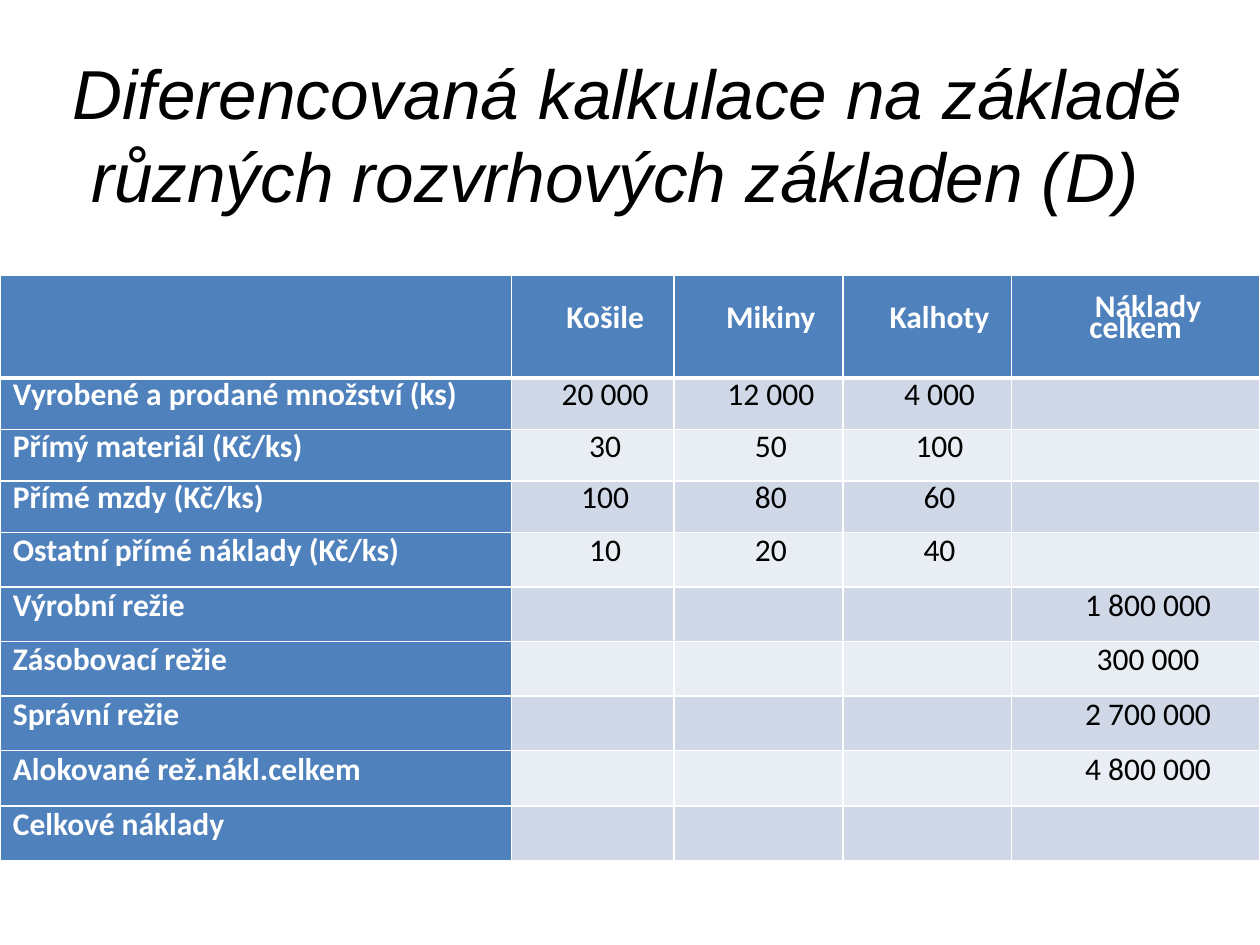
from dataclasses import dataclass

from lxml.etree import SubElement
from pptx import Presentation
from pptx.dml.color import RGBColor
from pptx.enum.text import MSO_ANCHOR as Anchor, PP_ALIGN as Align
from pptx.oxml.ns import qn
from pptx.util import Cm, Pt


@dataclass(frozen=True)
class Theme:
    white: str = "FFFFFF"
    black: str = "000000"
    head: str = "4F81BD"
    bands: tuple = ("D0D8E8", "E9EDF4")
    title_font: str = "Arial"
    table_font: str = "Calibri"
    title_size: float = 39.6
    table_size: float = 18
    spacing: float = 12
    thin: float = 1
    thick: float = 3


THEME = Theme()

TITLE = "Diferencovaná kalkulace na základě různých rozvrhových základen (D)"
COL_WIDTHS = [10.31, 3.28, 3.4, 3.4, 5.01]
ROW_HEIGHTS = [2.08] + [1.04] * 3 + [1.1] * 4 + [1.12, 1.1]
ROWS = [
    ("", "Košile", "Mikiny", "Kalhoty", "Náklady celkem"),
    ("Vyrobené a prodané množství (ks)", "20 000", "12 000", "4 000", ""),
    ("Přímý materiál (Kč/ks)", "30", "50", "100", ""),
    ("Přímé mzdy (Kč/ks)", "100", "80", "60", ""),
    ("Ostatní přímé náklady (Kč/ks)", "10", "20", "40", ""),
    ("Výrobní režie", "", "", "", "1 800 000"),
    ("Zásobovací režie", "", "", "", "300 000"),
    ("Správní režie", "", "", "", "2 700 000"),
    ("Alokované rež.nákl.celkem", "", "", "", "4 800 000"),
    ("Celkové náklady", "", "", "", ""),
]


def set_indent(p, indent):
    pPr = p._p.get_or_add_pPr()
    pPr.set("marL", "0")
    pPr.set("indent", str(Cm(indent)))


def add_run(p, text, font, size, color, bold=False, italic=False):
    r = p.add_run()
    r.text = text
    r.font.name = font
    r.font.size = Pt(size)
    r.font.bold = bold
    r.font.italic = italic
    r.font.color.rgb = RGBColor.from_string(color)


def set_borders(cell, top, bottom):
    tcPr = cell._tc.get_or_add_tcPr()
    widths = {"lnL": THEME.thin, "lnR": THEME.thin, "lnT": top, "lnB": bottom}
    for tag, width in widths.items():
        ln = SubElement(tcPr, qn(f"a:{tag}"), w=str(Pt(width)))
        fill = SubElement(ln, qn("a:solidFill"))
        SubElement(fill, qn("a:srgbClr"), val=THEME.white)


def fill_cell(cell, text, row, col):
    is_head = row == 0 or col == 0
    set_borders(
        cell,
        THEME.thick if row == 1 else THEME.thin,
        THEME.thick if row == 0 else THEME.thin,
    )
    cell.fill.solid()
    color = THEME.head if is_head else THEME.bands[(row - 1) % 2]
    cell.fill.fore_color.rgb = RGBColor.from_string(color)
    cell.vertical_anchor = Anchor.MIDDLE
    cell.margin_left = cell.margin_right = Cm(0.18)
    cell.margin_top = cell.margin_bottom = 0
    p = cell.text_frame.paragraphs[0]
    p.line_spacing = Pt(THEME.spacing)
    p.alignment = Align.CENTER if col else Align.LEFT
    set_indent(p, 0.5 if col else 0.08)
    if text:
        add_run(p, text, THEME.table_font, THEME.table_size,
                THEME.white if is_head else THEME.black, bold=is_head)


def add_title(slide, left, top, width, height):
    sp = slide.shapes.add_textbox(Cm(left), Cm(top), Cm(width), Cm(height))
    sp.fill.solid()
    sp.fill.fore_color.rgb = RGBColor.from_string(THEME.white)
    tf = sp.text_frame
    tf.word_wrap = True
    tf.vertical_anchor = Anchor.MIDDLE
    p = tf.paragraphs[0]
    p.alignment = Align.CENTER
    set_indent(p, 0.5)
    add_run(p, TITLE, THEME.title_font, THEME.title_size, THEME.black, italic=True)


def add_cost_table(slide, left, top, width, height):
    frame = slide.shapes.add_table(
        len(ROWS), len(COL_WIDTHS), Cm(left), Cm(top), Cm(width), Cm(height)
    )
    table = frame.table
    for column, share in zip(table.columns, COL_WIDTHS):
        column.width = Cm(width * share / sum(COL_WIDTHS))
    for table_row, share in zip(table.rows, ROW_HEIGHTS):
        table_row.height = Cm(height * share / sum(ROW_HEIGHTS))
    for row, values in enumerate(ROWS):
        for col, text in enumerate(values):
            fill_cell(table.cell(row, col), text, row, col)


def main():
    prs = Presentation()
    prs.slide_width, prs.slide_height = Cm(25.4), Cm(19.05)
    slide = prs.slides.add_slide(prs.slide_layouts[6])
    add_title(slide, 0.66, 1.09, 23.47, 3.18)
    add_cost_table(slide, 0, 5.54, 25.4, 11.81)
    prs.save("out.pptx")


if __name__ == "__main__":
    main()
